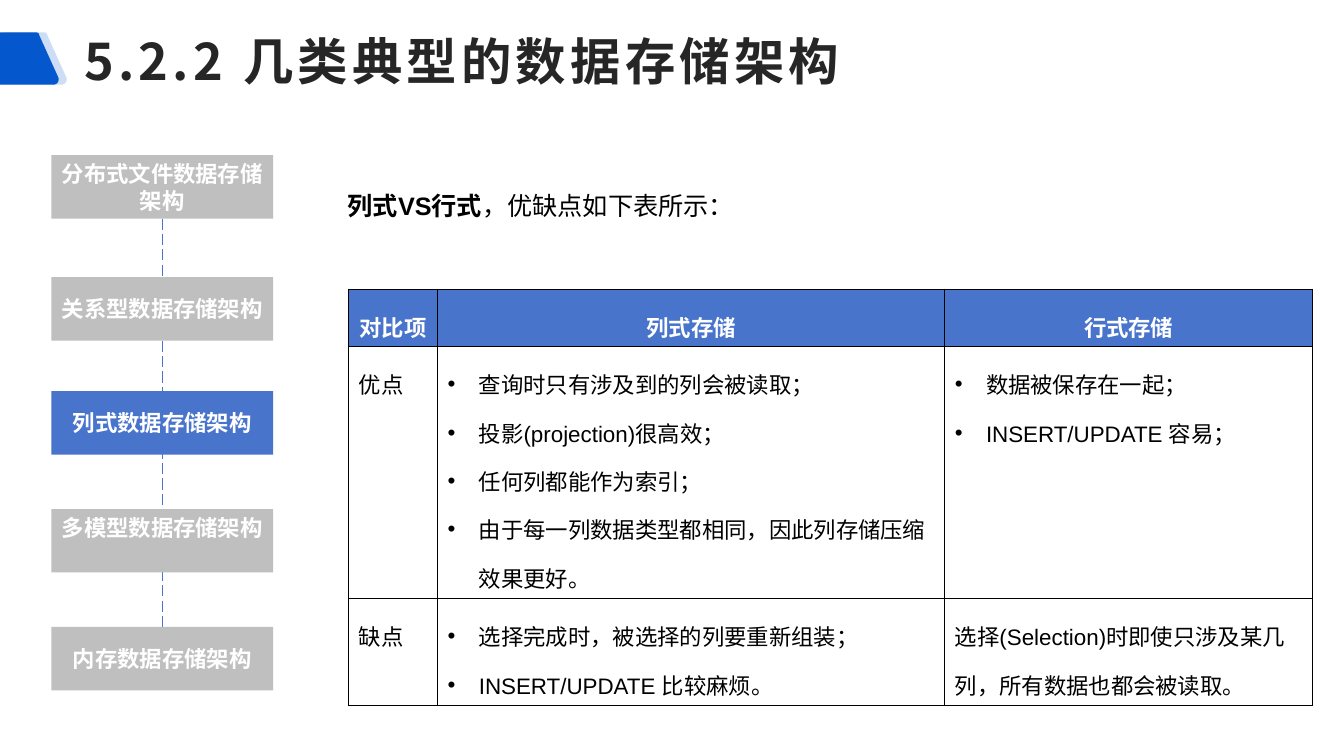
from lxml import etree
from pptx import Presentation
from pptx import util as u
from pptx.dml.color import RGBColor
from pptx.enum import dml, shapes, text
from pptx.oxml import parse_xml
from pptx.oxml.ns import nsdecls, qn

TITLE = "5.2.2 几类典型的数据存储架构"
LEAD = [("列式VS行式", True), ("，优缺点如下表所示：", False)]
HEAD = ["对比项", "列式存储", "行式存储"]
# Body cells: a string is plain text, a list is bulleted
BODY = [
    ["优点",
     ["查询时只有涉及到的列会被读取；",
      "投影(projection)很高效；",
      "任何列都能作为索引；",
      "由于每一列数据类型都相同，因此列存储压缩效果更好。"],
     ["数据被保存在一起；", "INSERT/UPDATE 容易；"]],
    ["缺点",
     ["选择完成时，被选择的列要重新组装；", "INSERT/UPDATE 比较麻烦。"],
     "选择(Selection)时即使只涉及某几列，所有数据也都会被读取。"],
]
COLS = [88, 503, 365]
ROWS = [57, 250, 106]
MID, TOP = text.MSO_ANCHOR.MIDDLE, text.MSO_ANCHOR.TOP
# Text, top, anchor, line spacing
STEPS = [
    ("分布式文件数据存储架构", 154, MID, None),
    ("关系型数据存储架构", 275, MID, None),
    ("列式数据存储架构", 388, MID, None),
    ("多模型数据存储架构", 505, TOP, None),
    ("内存数据存储架构", 622, TOP, 1.5),
]
ACTIVE = 2
STEP_X, STEP_W, STEP_H = 51, 220, 63
# Rounded slanted tab: start point, then lines (1 point) and curves (3 points)
TAB = [
    [(-25, 77)], [(-6, 35)], [(-5, 33), (-4, 32), (-2, 32)], [(35, 32)],
    [(37, 32), (39, 33), (39, 35)], [(58, 77)],
    [(59, 80), (57, 84), (53, 84)], [(-20, 84)],
    [(-24, 84), (-26, 80), (-25, 77)],
]

BLUE = RGBColor(0x48, 0x74, 0xCB)
DEEP = RGBColor(0x05, 0x57, 0xCD)
GRAY = RGBColor(0xBF, 0xBF, 0xBF)
INK = RGBColor(0x26, 0x26, 0x26)
BLACK = RGBColor(0, 0, 0)
WHITE = RGBColor(255, 255, 255)
SANS, HAN = "Arial", "Noto Sans CJK SC"
CENTER, LEFT = text.PP_ALIGN.CENTER, text.PP_ALIGN.LEFT
PX = 9144  # 100 px to the inch


def px(*vals):
    return [v * PX for v in vals]


def write(para, words, size=16, font=SANS, color=BLACK, bold=False,
          align=LEFT, gap=None, track=0, bullet=False):
    """Add one run to a paragraph and format both."""
    if bullet:
        props = para._p.get_or_add_pPr()
        props.set("marL", str(31 * PX))
        props.set("indent", str(-31 * PX))
        etree.SubElement(props, qn("a:buFont")).set("typeface", SANS)
        etree.SubElement(props, qn("a:buChar")).set("char", "•")
    para.alignment = align
    if gap:
        para.line_spacing = gap
    run = para.add_run()
    run.text = words
    face = run.font
    face.size, face.name, face.bold = u.Pt(size), font, bold
    face.color.rgb = color
    props = run._r.get_or_add_rPr()
    etree.SubElement(props, qn("a:ea")).set("typeface", HAN)
    if track:
        props.set("spc", str(track * 100))


def add_box(slide, place, anchor):
    frame = slide.shapes.add_textbox(*px(*place)).text_frame
    frame.word_wrap = True
    frame.vertical_anchor = anchor
    return frame.paragraphs[0]


def add_tab(slide, shift, alpha):
    """Draw the slanted title tab, moved right by shift px."""
    last = TAB[0][0]
    dots = []
    for part in TAB[1:]:
        if len(part) == 1:
            dots.append(part[0])
        else:
            curve = [last, *part]
            for step in range(1, 9):
                t = step / 8
                mix = [(1 - t) ** 3, 3 * t * (1 - t) ** 2,
                       3 * t * t * (1 - t), t ** 3]
                dots.append(tuple(sum(m * p[k] for m, p in zip(mix, curve))
                                  for k in (0, 1)))
        last = part[-1]
    dots = [((x + shift) * PX, y * PX) for x, y in dots]
    pen = slide.shapes.build_freeform(*dots[-1])
    pen.add_line_segments(dots[:-1], close=True)
    tab = pen.convert_to_shape()
    tab.shadow.inherit = False
    tab.fill.solid()
    tab.fill.fore_color.rgb = DEEP
    tab.line.fill.background()
    if alpha:
        tint = tab._element.spPr.find(".//" + qn("a:srgbClr"))
        etree.SubElement(tint, qn("a:alpha")).set("val", str(alpha * 1000))


def add_rail(slide):
    mid = STEP_X + STEP_W // 2
    ends = px(mid, STEPS[0][1] + STEP_H, mid, STEPS[-1][1])
    rail = slide.shapes.add_connector(shapes.MSO_CONNECTOR.STRAIGHT, *ends)
    rail.line.color.rgb = BLUE
    rail.line.width = u.Pt(1)
    rail.line.dash_style = dml.MSO_LINE.LONG_DASH
    etree.SubElement(rail._element.spPr, qn("a:effectLst"))


def add_step(slide, words, top, anchor, gap, color):
    step = slide.shapes.add_shape(shapes.MSO_SHAPE.RECTANGLE,
                                  *px(STEP_X, top, STEP_W, STEP_H))
    step.shadow.inherit = False
    step.fill.solid()
    step.fill.fore_color.rgb = color
    step.line.fill.background()
    frame = step.text_frame
    frame.word_wrap = True
    frame.vertical_anchor = anchor
    frame.margin_left = frame.margin_right = 9 * PX
    write(frame.paragraphs[0], words, font=HAN, color=WHITE, bold=True,
          align=CENTER, gap=gap)


def add_edges(cell):
    props = cell._tc.get_or_add_tcPr()
    for spot, side in enumerate("LRTB"):
        props.insert(spot, parse_xml(
            f'<a:ln{side} {nsdecls("a")} w="12700"><a:solidFill>'
            f'<a:srgbClr val="{BLACK}"/></a:solidFill></a:ln{side}>'))


def add_grid(slide):
    place = px(346, 287, sum(COLS), sum(ROWS))
    grid = slide.shapes.add_table(len(ROWS), len(COLS), *place).table
    grid.horz_banding = False
    for col, wide in zip(grid.columns, COLS):
        col.width = wide * PX
    for row, high in zip(grid.rows, ROWS):
        row.height = high * PX
    for r, line in enumerate([HEAD, *BODY]):
        for c, item in enumerate(line):
            cell = grid.cell(r, c)
            look = {}
            if r == 0:
                cell.fill.solid()
                cell.fill.fore_color.rgb = BLUE
                look = dict(color=WHITE, bold=True, align=CENTER)
            else:
                cell.fill.background()
            add_edges(cell)
            listed = isinstance(item, list)
            frame = cell.text_frame
            for n, words in enumerate(item if listed else [item]):
                para = frame.add_paragraph() if n else frame.paragraphs[0]
                write(para, words, gap=1.5, bullet=listed, **look)


def main():
    deck = Presentation()
    deck.slide_width, deck.slide_height = px(1333, 750)
    slide = deck.slides.add_slide(deck.slide_layouts[6])
    add_tab(slide, 8, 20)
    add_tab(slide, 0, None)
    write(add_box(slide, (74, 10, 1259, 100), MID), TITLE, size=36, font=HAN,
          color=INK, bold=True, track=3)
    add_grid(slide)
    lead = add_box(slide, (335, 172, 667, 52), TOP)
    for words, bold in LEAD:
        write(lead, words, size=18, bold=bold, gap=1.4)
    add_rail(slide)
    for n, step in enumerate(STEPS):
        add_step(slide, *step, BLUE if n == ACTIVE else GRAY)
    deck.save("out.pptx")


if __name__ == "__main__":
    main()
